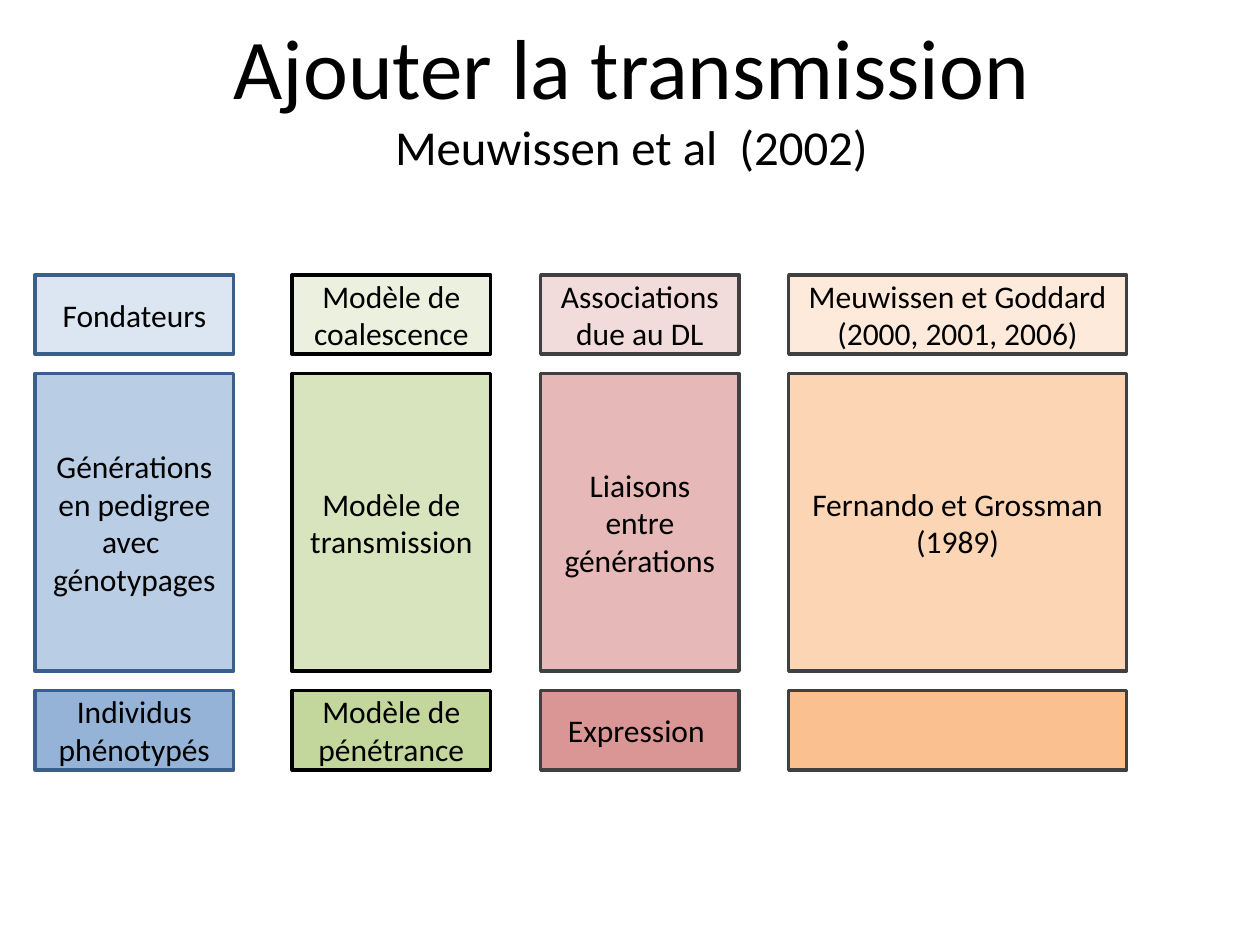
from pptx import Presentation
from pptx.dml.color import RGBColor
from pptx.enum.shapes import MSO_SHAPE
from pptx.enum.text import MSO_ANCHOR, PP_ALIGN
from pptx.util import Cm, Pt

RECTANGLE = MSO_SHAPE.RECTANGLE
MIDDLE = MSO_ANCHOR.MIDDLE
CENTER = PP_ALIGN.CENTER

ROW_HEIGHTS = [1.6, 6, 1.6]
ROW_GAP = 0.39

COLUMNS = [
    {"left": 0, "width": 4, "line": "3A5F8C", "cells": [
        ("DCE6F2", ["Fondateurs"]),
        ("B9CDE5", ["Générations en pedigree avec ", "génotypages"]),
        ("95B3D7", ["Individus phénotypés"])]},
    {"left": 5.18, "width": 4, "line": "000000", "cells": [
        ("EBF1DE", ["Modèle de coalescence"]),
        ("D7E4BD", ["Modèle de transmission"]),
        ("C3D69B", ["Modèle de pénétrance"])]},
    {"left": 10.19, "width": 4, "line": "404040", "cells": [
        ("F2DCDB", ["Associations due au DL"]),
        ("E6B9B8", ["Liaisons entre générations"]),
        ("D99694", ["Expression "])]},
    {"left": 15.19, "width": 6.81, "line": "404040", "cells": [
        ("FDEADA", ["Meuwissen et Goddard (2000, 2001, 2006)"]),
        ("FCD5B5", ["Fernando et Grossman (1989)"]),
        ("FAC090", [])]},
]


def color(value):
    return RGBColor.from_string(value)


def set_attributes(target, values):
    for name, value in values.items():
        setattr(target, name, value)


def add_run(paragraph, text, size):
    run = paragraph.add_run()
    run.text = text
    set_attributes(run.font, {"name": "Calibri", "size": Pt(size)})
    run.font.color.rgb = color("000000")


def add_title(slide, left, top, width, height):
    shape = slide.shapes.add_textbox(Cm(left), Cm(top), Cm(width), Cm(height))
    set_attributes(shape.text_frame, {"word_wrap": True, "vertical_anchor": MIDDLE})
    paragraph = shape.text_frame.paragraphs[0]
    paragraph.alignment = CENTER
    add_run(paragraph, "Ajouter la transmission", 48.6)
    paragraph.add_line_break()
    add_run(paragraph, "Meuwissen et al  (2002)", 27.9)


def add_cell(slide, left, top, width, height, fill, line, texts):
    shape = slide.shapes.add_shape(RECTANGLE, Cm(left), Cm(top), Cm(width), Cm(height))
    shape.shadow.inherit = False
    shape.fill.solid()
    shape.fill.fore_color.rgb = color(fill)
    shape.line.color.rgb = color(line)
    shape.line.width = Pt(2)
    frame = shape.text_frame
    set_attributes(frame, {"word_wrap": True, "vertical_anchor": MIDDLE})
    for index, text in enumerate(texts):
        paragraph = frame.add_paragraph() if index else frame.paragraphs[0]
        paragraph.alignment = CENTER
        add_run(paragraph, text, 18)


def add_column(slide, left, top, width, line, cells):
    for height, (fill, texts) in zip(ROW_HEIGHTS, cells):
        add_cell(slide, left, top, width, height, fill, line, texts)
        top += height + ROW_GAP


def add_model_grid(slide, left, top):
    for column in COLUMNS:
        add_column(slide, left + column["left"], top, column["width"],
                   column["line"], column["cells"])


def main():
    presentation = Presentation()
    set_attributes(presentation, {"slide_width": Cm(25.4), "slide_height": Cm(19.05)})
    slide = presentation.slides.add_slide(presentation.slide_layouts[6])
    add_title(slide, 1.3, 0.33, 22.86, 3.18)
    add_model_grid(slide, 0.71, 5.54)
    presentation.save("out.pptx")


if __name__ == "__main__":
    main()
